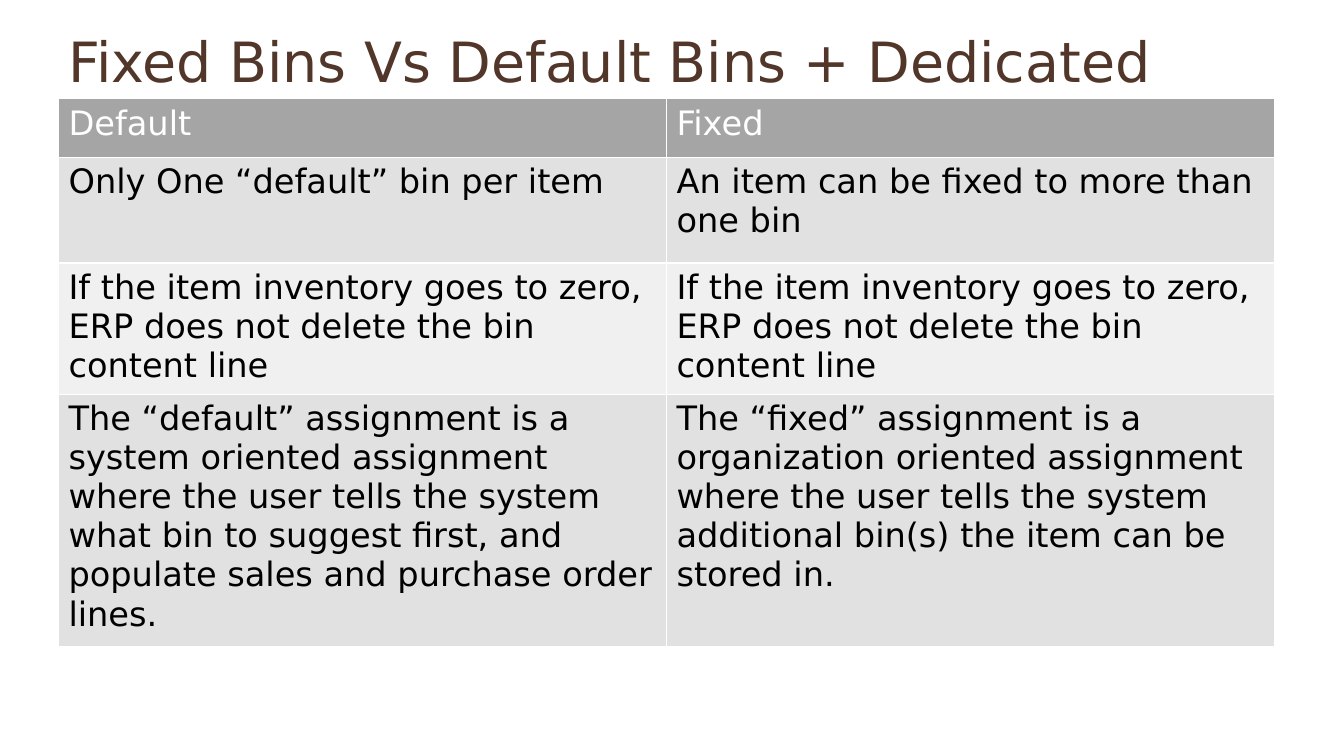
from dataclasses import dataclass
from typing import Any

from lxml import etree
from pptx import Presentation
from pptx import util as u
from pptx.dml import color
from pptx.enum import text
from pptx.oxml import ns


@dataclass(frozen=True)
class Theme:
    font: str = "DejaVu Sans"
    title_size: float = 39.6
    table_size: float = 24
    border_width: float = 1
    title: str = "513629"
    header_text: str = "FFFFFF"
    body_text: str = "000000"
    border: str = "FFFFFF"
    header_fill: str = "A5A5A5"
    dark_band: str = "E1E1E1"
    light_band: str = "F0F0F0"


@dataclass(frozen=True)
class Row:
    height: float
    default: str
    fixed: str


THEME = Theme()
TITLE = "Fixed Bins Vs Default Bins + Dedicated"
LEFT = 0.58
TABLE_TOP = 0.98
COLUMN_WIDTH = 6.03
INVENTORY = (
    "If the item inventory goes to zero, ERP does not delete the bin content line"
)
ROWS = [
    Row(0.58, "Default", "Fixed"),
    Row(
        1.05,
        "Only One “default” bin per item",
        "An item can be fixed to more than one bin",
    ),
    Row(1.29, INVENTORY, INVENTORY),
    Row(
        2.47,
        "The “default” assignment is a system oriented assignment where the user "
        "tells the system what bin to suggest first, and populate sales and "
        "purchase order lines.",
        "The “fixed” assignment is a organization oriented assignment where the "
        "user tells the system additional bin(s) the item can be stored in.",
    ),
]


def set_attributes(target: Any, values: dict[str, Any]) -> None:
    for name, value in values.items():
        setattr(target, name, value)


def write_text(frame: Any, content: str, size: float, ink: str) -> None:
    span = frame.paragraphs[0].add_run()
    span.text = content
    set_attributes(
        span.font, {"name": THEME.font, "size": u.Pt(size), "bold": False}
    )
    span.font.color.rgb = color.RGBColor.from_string(ink)


def add_borders(cell: Any) -> None:
    properties = cell._tc.get_or_add_tcPr()
    for side in ("L", "R", "T", "B"):
        line = etree.SubElement(
            properties, ns.qn(f"a:ln{side}"), w=str(u.Pt(THEME.border_width))
        )
        fill = etree.SubElement(line, ns.qn("a:solidFill"))
        etree.SubElement(fill, ns.qn("a:srgbClr"), val=THEME.border)


def add_title(page: Any) -> None:
    box = page.shapes.add_textbox(
        u.Inches(LEFT), u.Inches(0.2), u.Inches(11.83), u.Inches(0.88)
    )
    set_attributes(
        box.text_frame,
        {"word_wrap": True, "vertical_anchor": text.MSO_ANCHOR.MIDDLE},
    )
    box.text_frame.paragraphs[0].line_spacing = 0.9
    write_text(box.text_frame, TITLE, THEME.title_size, THEME.title)


def add_comparison(page: Any, rows: list[Row]) -> None:
    table = page.shapes.add_table(
        len(rows),
        2,
        u.Inches(LEFT),
        u.Inches(TABLE_TOP),
        u.Inches(2 * COLUMN_WIDTH),
        u.Inches(sum(row.height for row in rows)),
    ).table
    for column in table.columns:
        column.width = u.Inches(COLUMN_WIDTH)
    for index, row in enumerate(rows):
        table.rows[index].height = u.Inches(row.height)
        band = THEME.dark_band if index % 2 else THEME.light_band
        fill = band if index else THEME.header_fill
        ink = THEME.body_text if index else THEME.header_text
        for cell, content in zip(table.rows[index].cells, (row.default, row.fixed)):
            add_borders(cell)
            cell.fill.solid()
            cell.fill.fore_color.rgb = color.RGBColor.from_string(fill)
            write_text(cell.text_frame, content, THEME.table_size, ink)


def main() -> None:
    deck = Presentation()
    set_attributes(
        deck, {"slide_width": u.Inches(13.33), "slide_height": u.Inches(7.5)}
    )
    page = deck.slides.add_slide(deck.slide_layouts[6])
    add_title(page)
    add_comparison(page, ROWS)
    deck.save("out.pptx")


if __name__ == "__main__":
    main()
